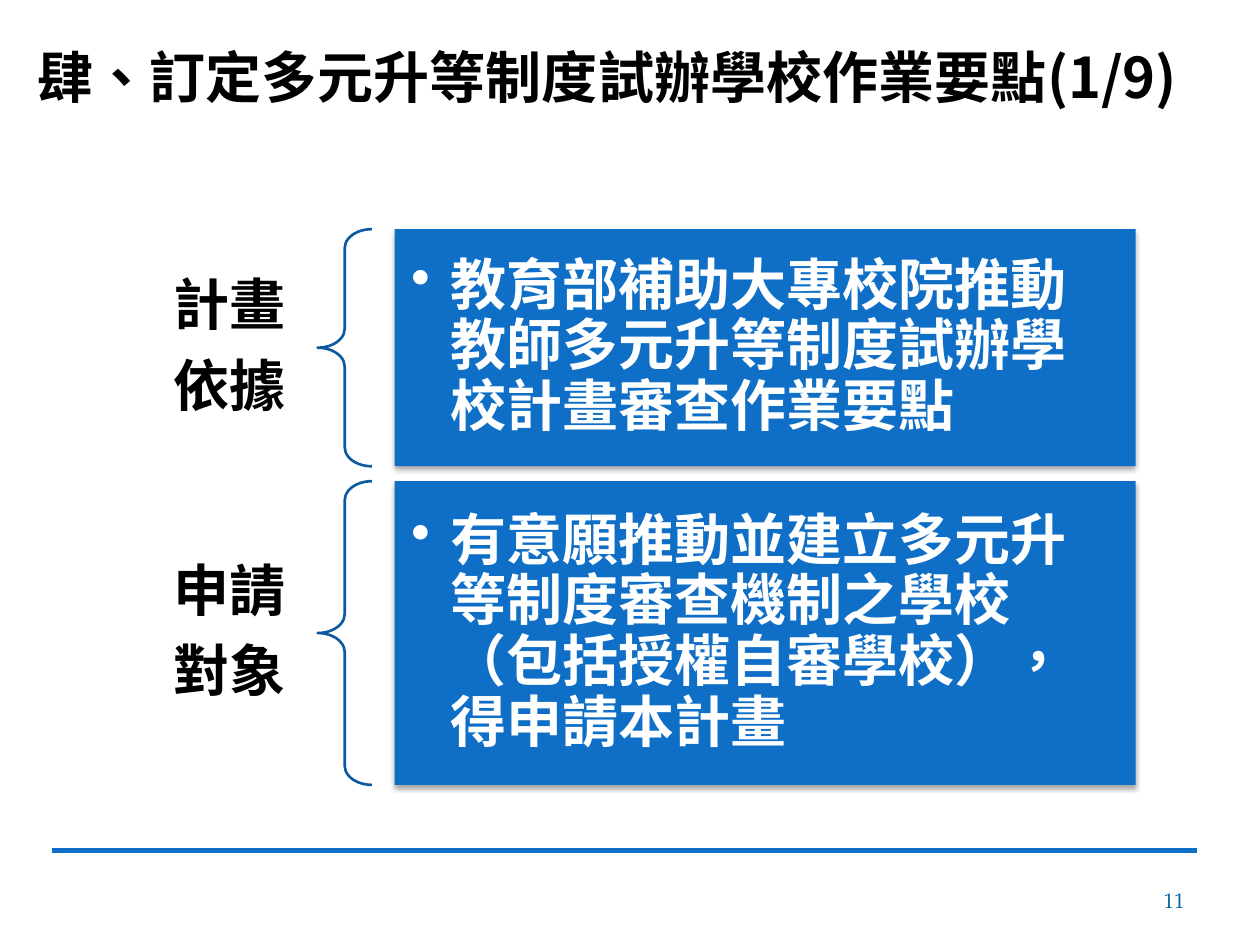
from dataclasses import dataclass

from lxml.etree import SubElement
from pptx import Presentation
from pptx.dml.color import RGBColor
from pptx.enum.lang import MSO_LANGUAGE_ID
from pptx.enum.shapes import MSO_CONNECTOR, MSO_SHAPE
from pptx.enum.text import MSO_ANCHOR, PP_ALIGN
from pptx.oxml.ns import qn
from pptx.util import Pt


@dataclass(frozen=True)
class Theme:
    black: RGBColor = RGBColor(0x00, 0x00, 0x00)
    white: RGBColor = RGBColor(0xFF, 0xFF, 0xFF)
    blue: RGBColor = RGBColor(0x0F, 0x6F, 0xC6)
    dark_blue: RGBColor = RGBColor(0x0C, 0x59, 0x9F)
    number_blue: RGBColor = RGBColor(0x00, 0x66, 0x99)
    chinese_font: str = "Noto Sans CJK SC"
    latin_font: str = "TeX Gyre Pagella"
    large: int = 32
    small: int = 12


THEME = Theme()

# Each row: label lines, detail, top and height
ROWS = [
    (("計畫", "依據"), "教育部補助大專校院推動教師多元升等制度試辦學校計畫審查作業要點", 131, 135.5),
    (("申請", "對象"), "有意願推動並建立多元升等制度審查機制之學校（包括授權自審學校），得申請本計畫", 275, 173.5),
]


def style_font(paragraph, size, color, name, bold=True):
    font = paragraph.font
    font.size, font.bold, font.name = Pt(size), bold, name
    font.color.rgb = color
    font.language_id = MSO_LANGUAGE_ID.TRADITIONAL_CHINESE
    latin = font._element.find(qn("a:latin"))
    east_asian = latin.makeelement(qn("a:ea"), {"typeface": THEME.chinese_font})
    latin.addnext(east_asian)


def set_margins(frame, horizontal, vertical):
    frame.margin_left = frame.margin_right = Pt(horizontal)
    frame.margin_top = frame.margin_bottom = Pt(vertical)


def add_text_box(slide, left, top, width, height, anchor=MSO_ANCHOR.TOP):
    frame = slide.shapes.add_textbox(Pt(left), Pt(top), Pt(width), Pt(height)).text_frame
    frame.word_wrap = True
    frame.vertical_anchor = anchor
    return frame


def add_bullet(paragraph, indent):
    properties = paragraph._p.get_or_add_pPr()
    properties.set("marL", str(Pt(indent)))
    properties.set("indent", str(-Pt(indent)))
    SubElement(properties, qn("a:buChar"), char="•")


def add_soft_shadow(shape):
    shape.shadow.inherit = False
    effects = shape._element.spPr.find(qn("a:effectLst"))
    shadow = SubElement(effects, qn("a:outerShdw"), blurRad=str(Pt(3)), dist=str(Pt(2)),
                        dir="5400000", rotWithShape="0")
    color = SubElement(shadow, qn("a:srgbClr"), val=str(THEME.black))
    SubElement(color, qn("a:alpha"), val="35000")


def add_title(slide, left, top, width, height):
    paragraph = add_text_box(slide, left, top, width, height).paragraphs[0]
    paragraph.text = "肆、訂定多元升等制度試辦學校作業要點(1/9)"
    style_font(paragraph, THEME.large, THEME.black, THEME.chinese_font)


def add_row(slide, left, top, width, height, label_lines, detail):
    label_width, label_height, brace_width, gap = 155.5, 103, 31, 13

    # Label, centred on the height of the row
    frame = add_text_box(slide, left, top + (height - label_height) / 2,
                         label_width, label_height, MSO_ANCHOR.MIDDLE)
    set_margins(frame, 18, 6.5)
    for index, line in enumerate(label_lines):
        paragraph = frame.add_paragraph() if index else frame.paragraphs[0]
        paragraph.text = line
        paragraph.alignment = PP_ALIGN.RIGHT
        paragraph.line_spacing = 0.9
        paragraph.space_after = Pt(11.2)
        style_font(paragraph, THEME.large, THEME.black, THEME.chinese_font)

    # Brace
    brace_left = left + label_width
    brace = slide.shapes.add_shape(MSO_SHAPE.LEFT_BRACE, Pt(brace_left), Pt(top),
                                   Pt(brace_width), Pt(height))
    brace.adjustments[0], brace.adjustments[1] = 0.35, 0.5
    brace.shadow.inherit = False
    brace.fill.background()
    brace.line.color.rgb = THEME.dark_blue
    brace.line.width = Pt(1.5)

    # Detail panel
    panel_left = brace_left + brace_width + gap
    panel = slide.shapes.add_shape(MSO_SHAPE.RECTANGLE, Pt(panel_left), Pt(top),
                                   Pt(left + width - panel_left), Pt(height))
    panel.fill.solid()
    panel.fill.fore_color.rgb = THEME.blue
    panel.line.fill.background()
    add_soft_shadow(panel)
    frame = panel.text_frame
    frame.word_wrap = True
    frame.vertical_anchor = MSO_ANCHOR.MIDDLE
    set_margins(frame, 9.5, 9.5)
    paragraph = frame.paragraphs[0]
    paragraph.text = detail
    paragraph.alignment = PP_ALIGN.LEFT
    paragraph.line_spacing = 0.9
    paragraph.space_after = Pt(4.8)
    add_bullet(paragraph, 22.5)
    style_font(paragraph, THEME.large, THEME.white, THEME.latin_font)


def add_footer(slide, left, top, width, height):
    # Rule across the top of the footer
    rule = slide.shapes.add_connector(MSO_CONNECTOR.STRAIGHT, Pt(left), Pt(top),
                                      Pt(left + width), Pt(top))
    rule.line.color.rgb = THEME.blue
    rule.line.width = Pt(3)
    SubElement(rule._element.spPr, qn("a:effectLst"))

    # Page number, right-aligned to the rule
    number_width, number_height = 168, 29
    paragraph = add_text_box(slide, left + width - number_width, top + height - number_height,
                             number_width, number_height, MSO_ANCHOR.MIDDLE).paragraphs[0]
    paragraph.text = "11"
    paragraph.alignment = PP_ALIGN.RIGHT
    style_font(paragraph, THEME.small, THEME.number_blue, THEME.latin_font, bold=False)


def main():
    presentation = Presentation()
    presentation.slide_width, presentation.slide_height = Pt(720), Pt(540)
    slide = presentation.slides.add_slide(presentation.slide_layouts[6])
    add_footer(slide, 30, 486, 654, 43)
    add_title(slide, 14.5, 21, 674.5, 46)
    for label_lines, detail, top, height in ROWS:
        add_row(slide, 26, top, 623, height, label_lines, detail)
    presentation.save("out.pptx")


if __name__ == "__main__":
    main()
